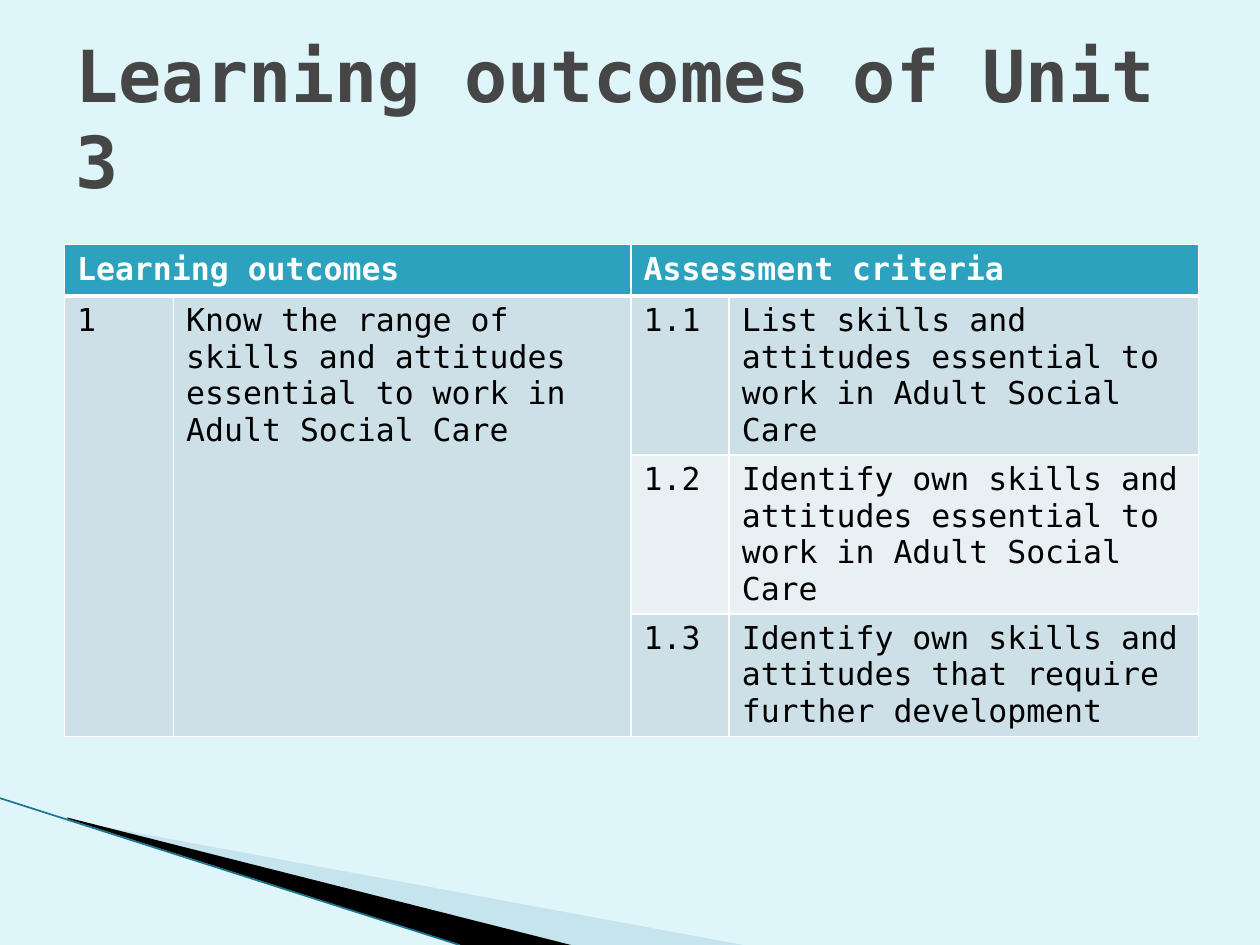
from lxml.etree import SubElement
from pptx import Presentation
from pptx.dml.color import RGBColor
from pptx.enum.shapes import MSO_CONNECTOR as CONN
from pptx.enum.text import MSO_ANCHOR as ANCHOR, MSO_AUTO_SIZE as AUTO, PP_ALIGN as ALIGN
from pptx.oxml.ns import qn
from pptx.util import Cm, Pt

FONT = "DejaVu Sans Mono"
TITLE = "Learning outcomes of Unit 3"
ROWS = [
    ["Learning outcomes", "", "Assessment criteria", ""],
    ["1", "Know the range of skills and attitudes essential to work in Adult Social Care",
     "1.1", "List skills and attitudes essential to work in Adult Social Care"],
    ["", "", "1.2", "Identify own skills and attitudes essential to work in Adult Social Care"],
    ["", "", "1.3", "Identify own skills and attitudes that require further development"],
]
FILLS = ["2DA2BF", "CDE0E8", "E8F0F4", "CDE0E8"]
COLS = [2.2, 9.22, 1.98, 9.46]
HEIGHTS = [1.04, 3.2, 3.2, 2.46]
MERGES = [(0, 0, 0, 1), (0, 2, 0, 3), (1, 0, 3, 0), (1, 1, 3, 1)]
WEDGES = [
    ("A0CBDC", 40, [(1.4, 16.54), (14.98, 19.05), (11.51, 19.05), (1.4, 16.51)]),
    ("000000", 100, [(1.35, 16.48), (11.51, 19.05), (9.29, 19.05), (1.37, 16.51)]),
]
EDGE = (0, 16.09, 9.26, 19.05)


def rgb(color):
    return RGBColor.from_string(color)


def write(tf, text, size=18, color="000000", bold=False):
    p = tf.paragraphs[0]
    p.alignment = ALIGN.LEFT
    r = p.add_run()
    r.text = text
    r.font.name, r.font.size, r.font.bold = FONT, Pt(size), bold
    r.font.color.rgb = rgb(color)


def add_wedge(slide, color, opacity, points):
    points = [(Cm(x), Cm(y)) for x, y in points]
    builder = slide.shapes.build_freeform(*points[0])
    builder.add_line_segments(points[1:], close=True)
    sp = builder.convert_to_shape()
    sp.shadow.inherit = False
    sp.line.fill.background()
    sp.fill.solid()
    sp.fill.fore_color.rgb = rgb(color)
    if opacity < 100:
        clr = sp.fill._xPr.find(".//" + qn("a:srgbClr"))
        SubElement(clr, qn("a:alpha"), val=str(opacity * 1000))


def add_edge(slide):
    line = slide.shapes.add_connector(CONN.STRAIGHT, *map(Cm, EDGE))
    line.line.color.rgb = rgb("1B7590")
    line.line.width = Pt(0.95)
    SubElement(line._element.spPr, qn("a:effectLst"))


def set_borders(cell, **widths):
    tcPr = cell._tc.get_or_add_tcPr()
    for side in "LRTB":
        ln = SubElement(tcPr, qn("a:ln" + side), w=str(Pt(widths.get(side, 1))))
        fill = SubElement(ln, qn("a:solidFill"))
        SubElement(fill, qn("a:srgbClr"), val="FFFFFF")


def add_outcomes(slide):
    frame = slide.shapes.add_table(len(ROWS), len(COLS), Cm(1.3), Cm(4.93),
                                   Cm(sum(COLS)), Cm(sum(HEIGHTS)))
    table = frame.table
    for column, width in zip(table.columns, COLS):
        column.width = Cm(width)
    for i, (texts, height, fill) in enumerate(zip(ROWS, HEIGHTS, FILLS)):
        table.rows[i].height = Cm(height)
        rule = {0: {"B": 3}, 1: {"T": 3}}.get(i, {})
        for j, text in enumerate(texts):
            cell = table.cell(i, j)
            set_borders(cell, **rule)
            cell.fill.solid()
            cell.fill.fore_color.rgb = rgb(FILLS[1] if i and j < 2 else fill)
            if text:
                write(cell.text_frame, text, color="000000" if i else "FFFFFF", bold=i == 0)
    for top, left, bottom, right in MERGES:
        table.cell(top, left).merge(table.cell(bottom, right))


def main():
    prs = Presentation()
    prs.slide_width, prs.slide_height = Cm(25.4), Cm(19.05)
    slide = prs.slides.add_slide(prs.slide_layouts[5])
    slide.background.fill.solid()
    slide.background.fill.fore_color.rgb = rgb("DEF5FA")
    for wedge in WEDGES:
        add_wedge(slide, *wedge)
    add_edge(slide)
    add_outcomes(slide)
    title = slide.shapes.title
    title.left, title.top, title.width, title.height = map(Cm, (1.27, 0.76, 22.86, 3.18))
    tf = title.text_frame
    tf.auto_size, tf.word_wrap, tf.vertical_anchor = AUTO.NONE, True, ANCHOR.MIDDLE
    write(tf, TITLE, size=41, color="464646", bold=True)
    prs.save("out.pptx")


if __name__ == "__main__":
    main()
